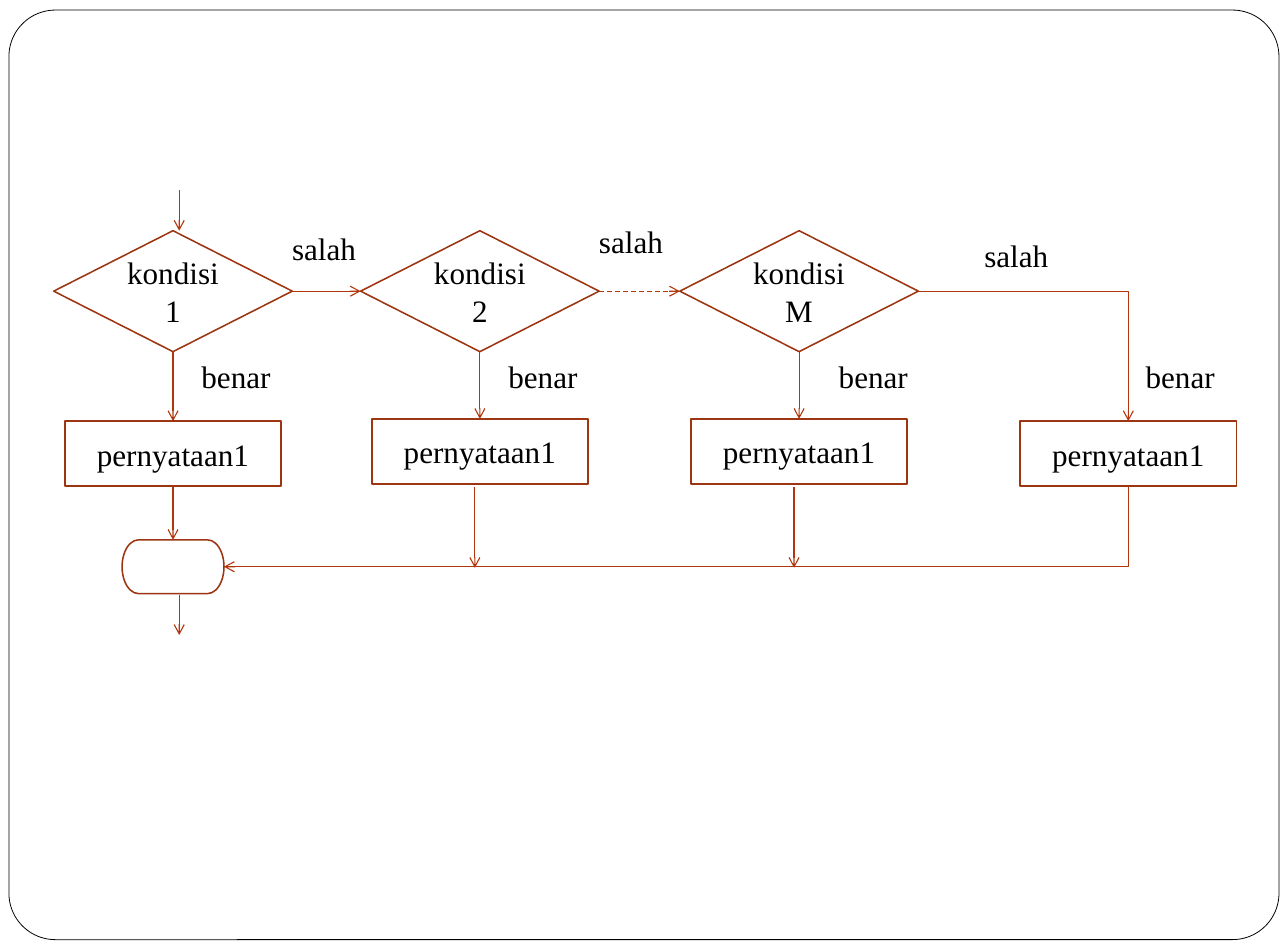
import pptx
import pptx.dml.color
import pptx.enum.dml
import pptx.enum.shapes
import pptx.enum.text
import pptx.oxml
import pptx.oxml.ns
import pptx.util
from pptx.util import Inches

SHAPES = pptx.enum.shapes.MSO_SHAPE
CONNECTORS = pptx.enum.shapes.MSO_CONNECTOR
TOP, LEFT, BOTTOM, RIGHT = range(4)


class FlowchartSlide:
    colors = {"outline": "9C3511", "arrow": "B1360B", "text": "000000",
              "frame": "000000", "paper": "FFFFFF"}
    font_name = "Times New Roman"
    font_size = 20

    def __init__(self, presentation):
        self.slide = presentation.slides.add_slide(presentation.slide_layouts[6])

    def color(self, name):
        return pptx.dml.color.RGBColor.from_string(self.colors[name])

    def style_line(self, line, color, width):
        line.color.rgb = self.color(color)
        line.width = pptx.util.Pt(width)

    def set_text(self, shape, text):
        shape.text_frame.word_wrap = True
        shape.text_frame.text = text
        for paragraph in shape.text_frame.paragraphs:
            for run in paragraph.runs:
                run.font.name = self.font_name
                run.font.size = pptx.util.Pt(self.font_size)
                run.font.color.rgb = self.color("text")

    def frame(self, left, top, width, height):
        shape = self.slide.shapes.add_shape(
            SHAPES.ROUNDED_RECTANGLE,
            Inches(left), Inches(top), Inches(width), Inches(height))
        shape.adjustments[0] = 0.05
        shape.shadow.inherit = False
        shape.fill.solid()
        shape.fill.fore_color.rgb = self.color("paper")
        self.style_line(shape.line, "frame", 0.5)

    def node(self, kind, left, top, width, height, text=""):
        shape = self.slide.shapes.add_shape(
            kind, Inches(left), Inches(top), Inches(width), Inches(height))
        shape.shadow.inherit = False
        shape.fill.background()
        self.style_line(shape.line, "outline", 1)
        if text:
            self.set_text(shape, text)
            shape.text_frame.vertical_anchor = pptx.enum.text.MSO_ANCHOR.MIDDLE
            shape.text_frame.paragraphs[0].alignment = pptx.enum.text.PP_ALIGN.CENTER
        return shape

    def label(self, text, left, top, width):
        shape = self.slide.shapes.add_textbox(
            Inches(left), Inches(top), Inches(width), Inches(0.44))
        self.set_text(shape, text)

    def connector(self, kind, start, end, arrow_end="tailEnd"):
        connector = self.slide.shapes.add_connector(
            kind, *(Inches(length) for length in start + end))
        self.style_line(connector.line, "arrow", 0.75)
        namespace = pptx.oxml.ns.nsdecls("a")
        properties = connector._element.spPr
        properties.find(pptx.oxml.ns.qn("a:ln")).append(
            pptx.oxml.parse_xml(f'<a:{arrow_end} {namespace} type="arrow"/>'))
        properties.append(pptx.oxml.parse_xml(f"<a:effectLst {namespace}/>"))
        return connector

    def arrow(self, start, end):
        return self.connector(CONNECTORS.STRAIGHT, start, end)

    def join(self, source, source_side, target, target_side):
        connector = self.arrow((0, 0), (1, 1))
        connector.begin_connect(source, source_side)
        connector.end_connect(target, target_side)
        return connector

    def corner(self, source, source_side, target, target_side, arrow_end):
        connector = self.connector(CONNECTORS.ELBOW, (0, 0), (1, 1), arrow_end)
        connector.begin_connect(source, source_side)
        connector.end_connect(target, target_side)
        connector._element.spPr.find(pptx.oxml.ns.qn("a:prstGeom")).set(
            "prst", "bentConnector2")


def main():
    presentation = pptx.Presentation()
    presentation.slide_width = Inches(11.5)
    presentation.slide_height = Inches(8.5)
    chart = FlowchartSlide(presentation)
    chart.frame(0.08, 0.09, 11.34, 8.3)

    conditions = [
        chart.node(SHAPES.FLOWCHART_DECISION, left, 2.06, 2.13, 1.08, text)
        for left, text in ((0.48, "kondisi1"), (3.22, "kondisi2"), (6.07, "kondisi M"))]
    statements = [
        chart.node(SHAPES.FLOWCHART_PROCESS, left, top, 1.93, 0.58, "pernyataan1")
        for left, top in ((0.58, 3.76), (3.32, 3.74), (6.17, 3.74), (9.11, 3.76))]
    terminator = chart.node(SHAPES.FLOWCHART_TERMINATOR, 1.09, 4.82, 0.91, 0.48)

    for condition, statement in zip(conditions, statements):
        chart.join(condition, BOTTOM, statement, TOP)
    chart.join(conditions[0], RIGHT, conditions[1], LEFT)
    skipped = chart.join(conditions[1], RIGHT, conditions[2], LEFT)
    skipped.line.dash_style = pptx.enum.dml.MSO_LINE.DASH
    chart.join(statements[0], BOTTOM, terminator, TOP)

    chart.corner(conditions[-1], RIGHT, statements[-1], TOP, "tailEnd")
    chart.corner(terminator, RIGHT, statements[-1], BOTTOM, "headEnd")

    for x, top, bottom in ((1.6, 1.7, 2.06), (1.6, 5.31, 5.67),
                           (4.24, 4.35, 5.07), (7.09, 4.35, 5.07)):
        chart.arrow((x, top), (x, bottom))

    for left in (1.7, 4.44, 7.39, 10.13):
        chart.label("benar", left, 3.14, 1.08)
    for left, top in ((2.51, 2), (5.25, 1.94), (8.69, 2.06)):
        chart.label("salah", left, top, 0.83)

    presentation.save("out.pptx")


if __name__ == "__main__":
    main()
